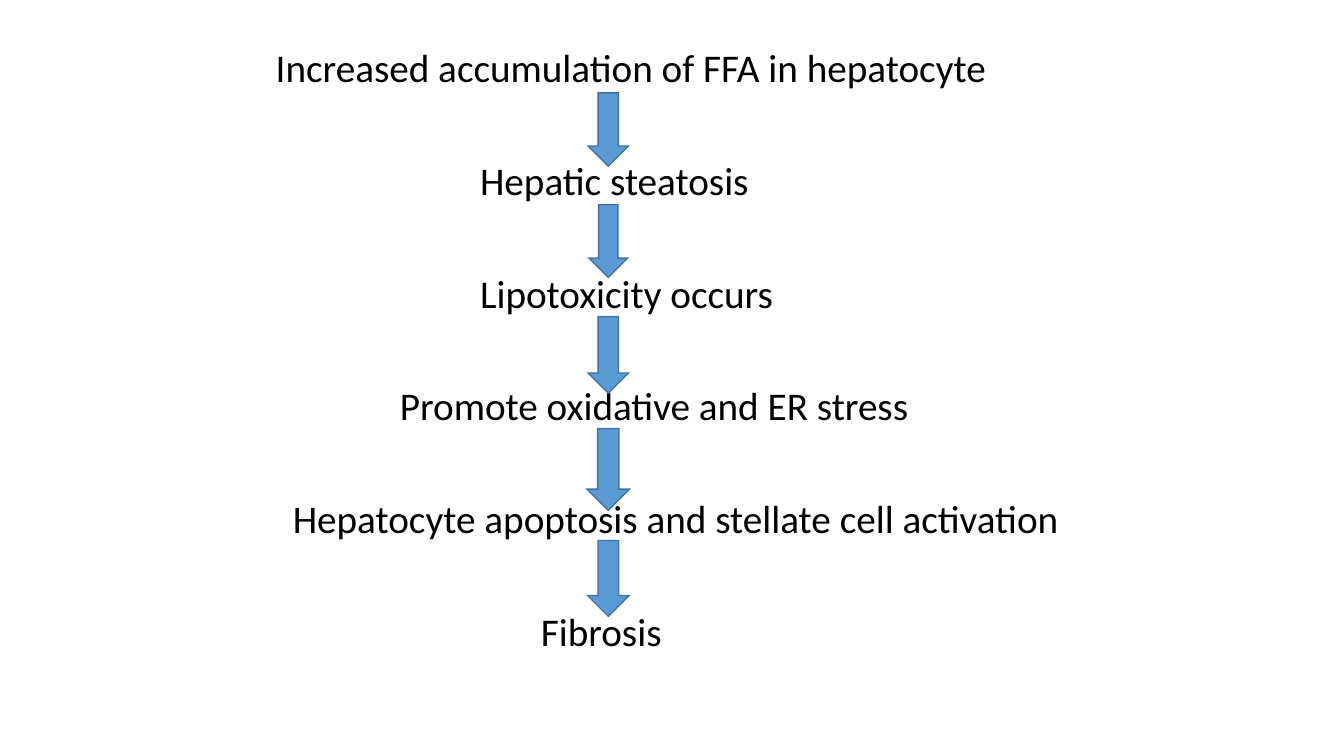
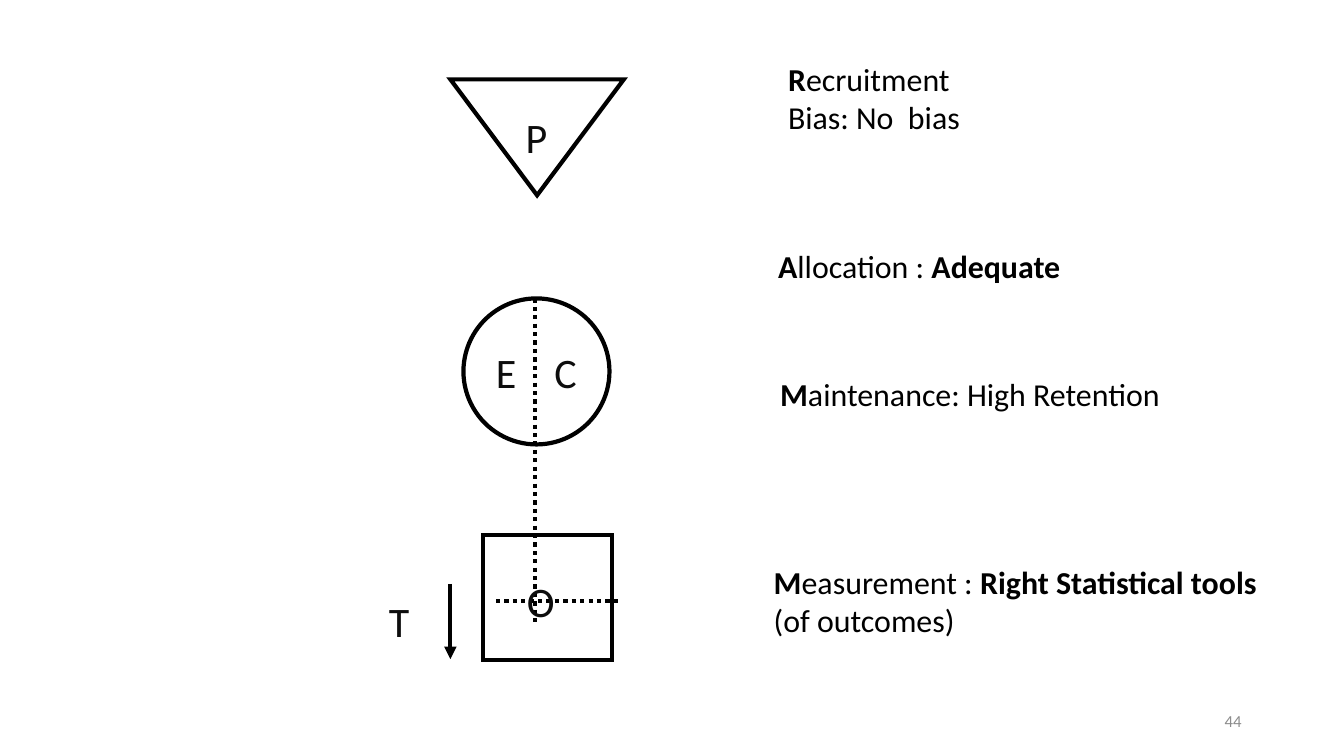
from lxml import etree
from pptx import Presentation
from pptx import util as u
from pptx.dml.color import RGBColor
from pptx.enum import dml, shapes, text
from pptx.oxml import ns

FONT = "Calibri"
BLACK, INK, GREY = "000000", "0D0D0D", "8C8C8C"
BLUE, BLUE_EDGE = "5B9BD5", "43739E"

STEPS = [
    (0, "Increased accumulation of FFA in hepatocyte"),
    (5.15, "Hepatic steatosis"),
    (5.15, "Lipotoxicity occurs"),
    (3.13, "Promote oxidative and ER stress"),
    (0.43, "Hepatocyte apoptosis and stellate cell activation"),
    (6.68, "Fibrosis"),
]
ARROW_SIZES = [(1.02, 1.85), (0.97, 1.83), (1.02, 1.93), (1.07, 2.06), (1.04, 1.91)]

LABELS = [("P", 3.45, 0.82), ("E", 2.7, 6.74), ("C", 4.17, 6.74),
          ("O", 3.48, 12.5), ("T", 0, 13.01)]

# Each note: left, top, paragraphs of (text, bold) runs
NOTES = [
    (0.36, 0, [[("R", True), ("ecruitment", False)], [("Bias: No  bias", False)]]),
    (0.11, 4.72, [[("A", True), ("llocation : ", False), ("Adequate", True)]]),
    (0.16, 7.95, [[("M", True), ("aintenance: High Retention", False)]]),
    (0, 12.67, [[("M", True), ("easurement : ", False),
                 ("Right Statistical tools ", True), ("(of outcomes)", False)]]),
]


def rgb(value):
    return RGBColor.from_string(value)


def add_text(s, left, top, width, height, content, size, color=BLACK,
             align=text.PP_ALIGN.LEFT, anchor=text.MSO_ANCHOR.TOP):
    """Add a text box without insets; content is a string or paragraphs of runs."""
    paragraphs = [[(content, False)]] if isinstance(content, str) else content
    box = s.shapes.add_textbox(u.Cm(left), u.Cm(top), u.Cm(width), u.Cm(height))
    tf = box.text_frame
    tf.word_wrap = True
    tf.vertical_anchor = anchor
    tf.margin_left = tf.margin_right = tf.margin_top = tf.margin_bottom = 0
    for i, runs in enumerate(paragraphs):
        p = tf.add_paragraph() if i else tf.paragraphs[0]
        p.alignment = align
        for wording, bold in runs:
            r = p.add_run()
            r.text = wording
            r.font.name, r.font.size, r.font.bold = FONT, u.Pt(size), bold
            r.font.color.rgb = rgb(color)


def set_line(sp, color, width):
    sp.line.color.rgb = rgb(color)
    sp.line.width = u.Pt(width)


def add_line_part(sp, tag, **attributes):
    part = etree.SubElement(sp.line._get_or_add_ln(), ns.qn(tag))
    for name, value in attributes.items():
        part.set(name, value)


def add_shape(s, kind, left, top, width, height, line, line_width, fill=None):
    sp = s.shapes.add_shape(kind, u.Cm(left), u.Cm(top), u.Cm(width), u.Cm(height))
    sp.shadow.inherit = False
    if fill:
        sp.fill.solid()
        sp.fill.fore_color.rgb = rgb(fill)
    else:
        sp.fill.background()
    set_line(sp, line, line_width)
    add_line_part(sp, "a:miter", lim="800000")
    return sp


def add_line(s, x1, y1, x2, y2, dotted=False, arrow=False):
    sp = s.shapes.add_connector(shapes.MSO_CONNECTOR.STRAIGHT,
                                u.Cm(x1), u.Cm(y1), u.Cm(x2), u.Cm(y2))
    set_line(sp, BLACK, 3)
    if dotted:
        sp.line.dash_style = dml.MSO_LINE.ROUND_DOT
    if arrow:
        add_line_part(sp, "a:tailEnd", type="triangle")
    etree.SubElement(sp._element.spPr, ns.qn("a:effectLst"))


def add_flow(s, left, top):
    """Place the chain of steps, with the arrows on one axis between them."""
    step_pitch, arrow_pitch, axis, first_arrow = 2.84, 2.82, 8.38, 1.24
    for i, (indent, wording) in enumerate(STEPS):
        add_text(s, left + indent, top + i * step_pitch, 21, 1.21, wording, 28)
    for i, (width, height) in enumerate(ARROW_SIZES):
        add_shape(s, shapes.MSO_SHAPE.DOWN_ARROW, left + axis - width / 2,
                  top + first_arrow + i * arrow_pitch, width, height,
                  BLUE_EDGE, 1, BLUE)


def add_study_diagram(s, left, top):
    """Place population, groups and outcome, with the time arrow at the left."""
    kinds = shapes.MSO_SHAPE
    add_shape(s, kinds.OVAL, left + 1.88, top + 5.52, 3.68, 3.68, BLACK, 3)
    add_shape(s, kinds.RECTANGLE, left + 2.37, top + 11.49, 3.25, 3.15, BLACK, 3)
    triangle = add_shape(s, kinds.ISOSCELES_TRIANGLE, left + 1.55, top,
                         4.37, 2.92, BLACK, 3)
    triangle.rotation = 180
    add_line(s, left + 3.69, top + 5.52, left + 3.69, top + 13.72, dotted=True)
    add_line(s, left + 2.7, top + 13.14, left + 5.85, top + 13.14, dotted=True)
    add_line(s, left + 1.55, top + 12.71, left + 1.55, top + 14.61, arrow=True)
    for letter, x, y in LABELS:
        add_text(s, left + x, top + y, 1, 1.3, letter, 30, INK)


def add_notes_column(s, left, top):
    for x, y, paragraphs in NOTES:
        add_text(s, left + x, top + y, 12.4, 0.98 * len(paragraphs), paragraphs, 22.8)


def add_page_number(s, number):
    add_text(s, 24.2, 17.65, 7.09, 1.02, number, 12, GREY,
             text.PP_ALIGN.RIGHT, text.MSO_ANCHOR.MIDDLE)


def main():
    prs = Presentation()
    prs.slide_width, prs.slide_height = u.Cm(33.87), u.Cm(19.05)
    blank = prs.slide_layouts[6]

    add_flow(prs.slides.add_slide(blank), 6.95, 1.1)

    s = prs.slides.add_slide(blank)
    add_study_diagram(s, 9.8, 2)
    add_notes_column(s, 19.5, 1.5)
    add_page_number(s, "44")

    prs.save("out.pptx")


if __name__ == "__main__":
    main()
